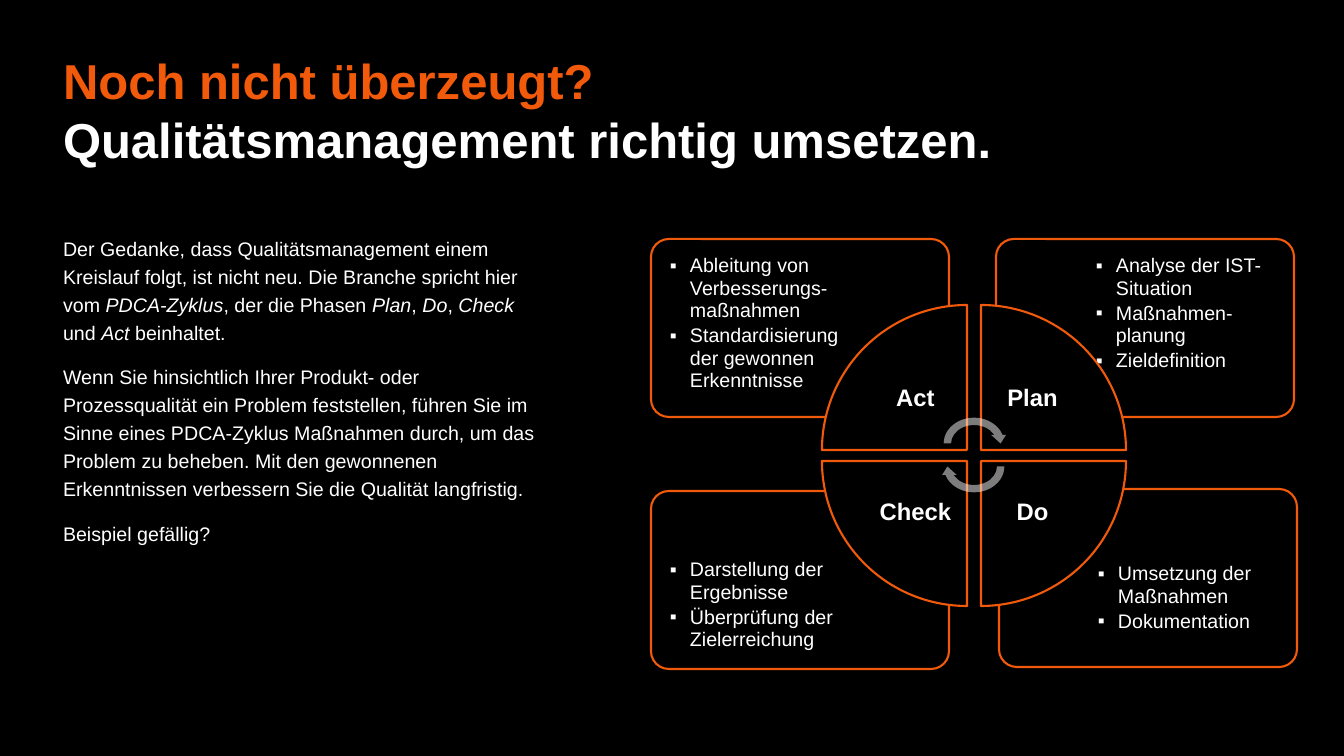
from lxml.etree import SubElement
from pptx import Presentation
from pptx.dml.color import RGBColor
from pptx.enum.shapes import MSO_SHAPE
from pptx.enum.text import MSO_ANCHOR, PP_ALIGN
from pptx.oxml.ns import qn
from pptx.util import Emu, Pt

BLACK, WHITE, ORANGE = "000000", "FFFFFF", "F05A0A"
SCALE = 914400 / 100.8


def px(size):
    """Turn pixels into EMU."""
    return Emu(round(size * SCALE))


def tint(color):
    """Turn a hex string into a colour."""
    return RGBColor.from_string(color)


def draw(slide, kind, box, fill=None, line=None, turn=0):
    """Add a preset shape with plain fill and line."""
    shape = slide.shapes.add_shape(kind, *map(px, box))
    shape.shadow.inherit = False
    shape.rotation = turn
    if fill:
        shape.fill.solid()
        shape.fill.fore_color.rgb = tint(fill)
    else:
        shape.fill.background()
    if line:
        shape.line.color.rgb = tint(line)
        shape.line.width = Pt(1.5)
    else:
        shape.line.fill.background()
    return shape


def frame(slide, box, pads):
    """Add a wrapping text box and return its frame."""
    text = slide.shapes.add_textbox(*map(px, box)).text_frame
    text.word_wrap = True
    text.margin_left, text.margin_top, text.margin_right, text.margin_bottom = map(px, pads)
    return text


def lines(text, count):
    """Yield the given number of paragraphs of a frame."""
    for spot in range(count):
        yield text.add_paragraph() if spot else text.paragraphs[0]


def write(para, words, size, color=WHITE, bold=False, slant=False):
    """Add one run to a paragraph."""
    run = para.add_run()
    run.text = words
    font = run.font
    font.name, font.size, font.bold, font.italic = "Arial", Pt(size), bold, slant
    font.color.rgb = tint(color)


def head(slide, box, rows):
    """Place the heading lines one below the other."""
    left, top, width, high = box
    step = high // len(rows)
    for row, (words, color) in enumerate(rows):
        text = frame(slide, (left, top + row * step, width, step), (10, 5, 10, 5))
        write(text.paragraphs[0], words, 35, color, bold=True)


def prose(slide, box, paras):
    """Place body text, with every second run in italics."""
    text = frame(slide, box, (10, 5, 10, 5))
    for para, runs in zip(lines(text, len(paras)), paras):
        para.line_spacing, para.space_after = Pt(20), Pt(12)
        for spot, words in enumerate(runs):
            write(para, words, 14, slant=spot % 2 == 1)


def card(slide, box, shift, pad, dent, points):
    """Place a rounded card with its bullet list."""
    left, top, width, high = box
    draw(slide, MSO_SHAPE.ROUNDED_RECTANGLE, box, line=ORANGE).adjustments[0] = 0.1
    over, down = shift
    text = frame(slide, (left + over, top + down, 201, 126), (6, pad, 6, 6))
    for para, words in zip(lines(text, len(points)), points):
        para.line_spacing, para.space_after = 0.95, Pt(2)
        props = para._p.get_or_add_pPr()
        props.set("marL", str(px(dent)))
        props.set("indent", str(px(-20)))
        SubElement(props, qn("a:buFont")).set("typeface", "Arial")
        SubElement(props, qn("a:buChar")).set("char", "▪")
        write(para, words, 14)


def wheel(slide, box, names):
    """Place four wedges, their labels and the two arrows."""
    left, top, width, high = box
    side, label = 145, 103
    for spot, name in enumerate(names):
        east, south = spot in (1, 2), spot > 1
        x = left + east * (width - side)
        y = top + south * (high - side)
        draw(slide, MSO_SHAPE.PIE_WEDGE, (x, y, side, side), BLACK, ORANGE, spot * 90)
        inner = side - label
        spots = (x + (not east) * inner, y + (not south) * inner, label, label)
        text = frame(slide, spots, (13, 13, 13, 13))
        text.vertical_anchor = MSO_ANCHOR.MIDDLE
        para = text.paragraphs[0]
        para.alignment, para.line_spacing = PP_ALIGN.CENTER, 0.9
        write(para, name, 17, bold=True)
    for down, turn in ((109, 0), (132, 180)):
        place = (left + 118, top + down, 68, 59)
        arrow = draw(slide, MSO_SHAPE.CIRCULAR_ARROW, place, WHITE, turn=turn)
        tone = arrow._element.spPr.find(qn("a:solidFill"))[0]
        SubElement(tone, qn("a:alpha")).set("val", "49000")


def main():
    """Build and save the slide."""
    deck = Presentation()
    deck.slide_width, deck.slide_height = px(1344), px(756)
    slide = deck.slides.add_slide(deck.slide_layouts[6])
    slide.background.fill.solid()
    slide.background.fill.fore_color.rgb = tint(BLACK)
    head(slide, (53, 45, 1219, 119), [
        ("Noch nicht überzeugt?", ORANGE),
        ("Qualitätsmanagement richtig umsetzen.", WHITE),
    ])
    prose(slide, (53, 227, 498, 469), [
        ["Der Gedanke, dass Qualitätsmanagement einem Kreislauf folgt, ist nicht neu. "
         "Die Branche spricht hier vom ", "PDCA-Zyklus", ", der die Phasen ", "Plan", ", ",
         "Do", ", ", "Check", " und ", "Act", " beinhaltet."],
        ["Wenn Sie hinsichtlich Ihrer Produkt- oder Prozessqualität ein Problem feststellen, "
         "führen Sie im Sinne eines PDCA-Zyklus Maßnahmen durch, um das Problem zu beheben. "
         "Mit den gewonnenen Erkenntnissen verbessern Sie die Qualität langfristig."],
        ["Beispiel gefällig?"],
    ])
    cards = [
        ((999, 489), (93, 48), 26, 20, ["Umsetzung der Maßnahmen", "Dokumentation"]),
        ((651, 491), (4, 48), 20, 29,
         ["Darstellung der Ergebnisse", "Überprüfung der Zielerreichung"]),
        ((996, 239), (94, 4), 12, 20,
         ["Analyse der IST-Situation", "Maßnahmen-planung", "Zieldefinition"]),
        ((651, 239), (4, 4), 12, 29,
         ["Ableitung von Verbesserungs-maßnahmen",
          "Standardisierung der gewonnen Erkenntnisse"]),
    ]
    for place, *rest in cards:
        card(slide, (*place, 298, 178), *rest)
    wheel(slide, (822, 305, 304, 301), ["Act", "Plan", "Do", "Check"])
    deck.save("out.pptx")


if __name__ == "__main__":
    main()
